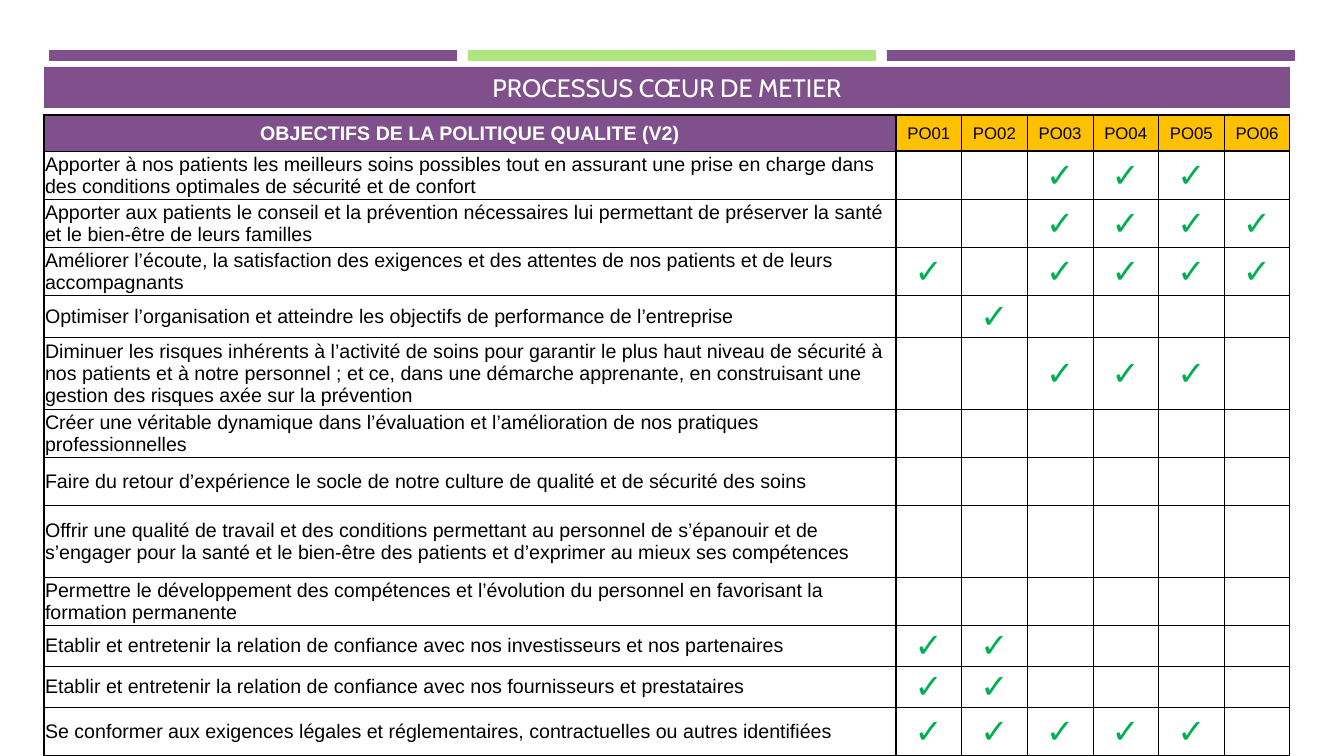
from dataclasses import dataclass

from lxml import etree
from pptx import Presentation
from pptx.dml.color import RGBColor
from pptx.enum.shapes import MSO_SHAPE
from pptx.enum.text import MSO_ANCHOR, MSO_AUTO_SIZE, PP_ALIGN
from pptx.oxml.ns import qn
from pptx.util import Emu, Pt

RECTANGLE = MSO_SHAPE.RECTANGLE
MIDDLE = MSO_ANCHOR.MIDDLE
NO_AUTOFIT = MSO_AUTO_SIZE.NONE
LEFT, CENTER = PP_ALIGN.LEFT, PP_ALIGN.CENTER

EMU_PER_PX = 914400 / 100.8
TITLE_ONLY = 5


@dataclass(frozen=True)
class Theme:
    """Colours, fonts, type sizes and border widths of the slide."""
    purple: str = "7F508B"
    green: str = "ADE67F"
    amber: str = "FFC000"
    check: str = "00B050"
    black: str = "000000"
    white: str = "FFFFFF"
    title_font: str = "Cabin"
    body_font: str = "Arial"
    title_size: int = 18
    body_size: int = 14
    code_size: int = 12
    check_size: int = 24
    thin: float = 0.5
    thick: float = 1


THEME = Theme()

TITLE = "PROCESSUS CŒUR DE METIER"
HEADING = "OBJECTIFS DE LA POLITIQUE QUALITE (V2)"
PROCESSES = ["PO01", "PO02", "PO03", "PO04", "PO05", "PO06"]
HEADER_HEIGHT = 36
OBJECTIVE_WIDTH, PROCESSES_WIDTH = 852, 394

# Row height in px, objective, numbers of the processes that serve it
OBJECTIVES = [
    (48, "Apporter à nos patients les meilleurs soins possibles tout en assurant une prise en charge "
         "dans des conditions optimales de sécurité et de confort", {3, 4, 5}),
    (48, "Apporter aux patients le conseil et la prévention nécessaires lui permettant de préserver "
         "la santé et le bien-être de leurs familles", {3, 4, 5, 6}),
    (48, "Améliorer l’écoute, la satisfaction des exigences et des attentes de nos patients et de "
         "leurs accompagnants", {1, 3, 4, 5, 6}),
    (42, "Optimiser l’organisation et atteindre les objectifs de performance de l’entreprise", {2}),
    (72, "Diminuer les risques inhérents à l’activité de soins pour garantir le plus haut niveau de "
         "sécurité à nos patients et à notre personnel ; et ce, dans une démarche apprenante, en "
         "construisant une gestion des risques axée sur la prévention", {3, 4, 5}),
    (48, "Créer une véritable dynamique dans l’évaluation et l’amélioration de nos pratiques "
         "professionnelles", set()),
    (48, "Faire du retour d’expérience le socle de notre culture de qualité et de sécurité des soins",
     set()),
    (72, "Offrir une qualité de travail et des conditions permettant au personnel de s’épanouir et de "
         "s’engager pour la santé et le bien-être des patients et d’exprimer au mieux ses compétences",
     set()),
    (48, "Permettre le développement des compétences et l’évolution du personnel en favorisant la "
         "formation permanente", set()),
    (41, "Etablir et entretenir la relation de confiance avec nos investisseurs et nos partenaires",
     {1, 2}),
    (41, "Etablir et entretenir la relation de confiance avec nos fournisseurs et prestataires",
     {1, 2}),
    (49, "Se conformer aux exigences légales et réglementaires, contractuelles ou autres identifiées",
     {1, 2, 3, 4, 5}),
]


def px(length):
    """Turn a length in px into EMU."""
    return Emu(round(length * EMU_PER_PX))


def add_text(frame, text, size, color, font=THEME.body_font, bold=False, align=CENTER):
    """Write one run into the first paragraph of a text frame."""
    paragraph = frame.paragraphs[0]
    paragraph.alignment = align
    run = paragraph.add_run()
    run.text = text
    run.font.name = font
    run.font.size = Pt(size)
    run.font.bold = bold
    run.font.color.rgb = RGBColor.from_string(color)


def add_bar(slide, left, color):
    """Draw one of the decorative bars above the title."""
    bar = slide.shapes.add_shape(RECTANGLE, px(left), px(50), px(408), px(11))
    bar.shadow.inherit = False
    bar.fill.solid()
    bar.fill.fore_color.rgb = RGBColor.from_string(color)
    bar.line.fill.background()


def place_title(slide):
    """Turn the title placeholder into the purple banner."""
    banner = slide.shapes.title
    banner.left, banner.top, banner.width, banner.height = px(44), px(67), px(1246), px(41)
    banner.fill.solid()
    banner.fill.fore_color.rgb = RGBColor.from_string(THEME.purple)
    frame = banner.text_frame
    frame.word_wrap = True
    frame.auto_size = NO_AUTOFIT
    frame.vertical_anchor = MIDDLE
    add_text(frame, TITLE, THEME.title_size, THEME.white, THEME.title_font)


def add_borders(cell, row, column):
    """Draw thick borders round the blocks of the matrix and thin ones inside."""
    last_row, last_column = len(OBJECTIVES), len(PROCESSES)
    thick_edges = {
        "a:lnL": column <= 1,
        "a:lnR": column in (0, last_column),
        "a:lnT": row == 0 or (row == 1 and column > 0),
        "a:lnB": row == last_row or (row == 0 and column > 0),
    }
    properties = cell._tc.get_or_add_tcPr()
    for tag, is_thick in thick_edges.items():
        width = Pt(THEME.thick if is_thick else THEME.thin)
        edge = etree.SubElement(properties, qn(tag), w=str(width))
        fill = etree.SubElement(edge, qn("a:solidFill"))
        etree.SubElement(fill, qn("a:srgbClr"), val=THEME.black)


def format_cell(cell, row, column, color=None):
    """Set the margins, borders and fill of a cell."""
    cell.margin_left = cell.margin_right = cell.margin_top = px(1)
    cell.margin_bottom = 0
    cell.vertical_anchor = MIDDLE
    add_borders(cell, row, column)
    if color:
        cell.fill.solid()
        cell.fill.fore_color.rgb = RGBColor.from_string(color)
    else:
        cell.fill.background()


def fill_header(table):
    """Write the heading and the process codes."""
    heading = table.cell(0, 0)
    format_cell(heading, 0, 0, THEME.purple)
    add_text(heading.text_frame, HEADING, THEME.body_size, THEME.white, bold=True)
    for column, code in enumerate(PROCESSES, 1):
        cell = table.cell(0, column)
        format_cell(cell, 0, column, THEME.amber)
        add_text(cell.text_frame, code, THEME.code_size, THEME.black)


def fill_objective(table, row, objective, served_by):
    """Write one objective and tick the processes that serve it."""
    label = table.cell(row, 0)
    format_cell(label, row, 0)
    add_text(label.text_frame, objective, THEME.body_size, THEME.black, align=LEFT)
    for column in range(1, len(PROCESSES) + 1):
        cell = table.cell(row, column)
        format_cell(cell, row, column)
        if column in served_by:
            add_text(cell.text_frame, "✓", THEME.check_size, THEME.check)


def add_matrix(slide):
    """Add the table of objectives against processes."""
    heights = [HEADER_HEIGHT] + [height for height, _, _ in OBJECTIVES]
    widths = [OBJECTIVE_WIDTH] + [PROCESSES_WIDTH / len(PROCESSES)] * len(PROCESSES)
    table = slide.shapes.add_table(len(heights), len(widths), px(44), px(115),
                                   px(sum(widths)), px(sum(heights))).table
    table.first_row = table.horz_banding = False
    for table_row, height in zip(table.rows, heights):
        table_row.height = px(height)
    for table_column, width in zip(table.columns, widths):
        table_column.width = px(width)
    fill_header(table)
    for row, (_, objective, served_by) in enumerate(OBJECTIVES, 1):
        fill_objective(table, row, objective, served_by)


def main():
    """Build the slide and save it."""
    presentation = Presentation()
    presentation.slide_width, presentation.slide_height = px(1344), px(756)
    slide = presentation.slides.add_slide(presentation.slide_layouts[TITLE_ONLY])
    for index, color in enumerate([THEME.purple, THEME.green, THEME.purple]):
        add_bar(slide, 49 + 419 * index, color)
    place_title(slide)
    add_matrix(slide)
    presentation.save("out.pptx")


if __name__ == "__main__":
    main()
